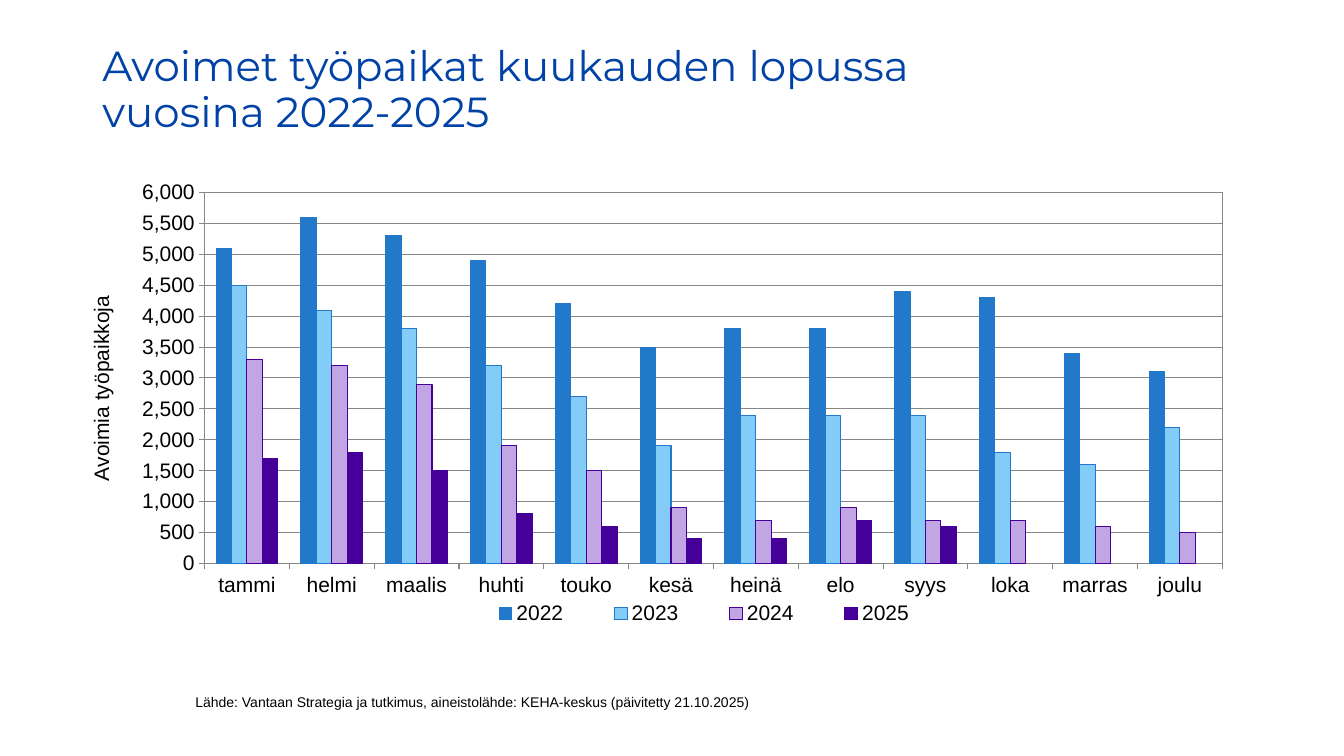
from lxml import etree
from pptx import Presentation
from pptx.chart.data import CategoryChartData
from pptx.dml.color import RGBColor
from pptx.enum.chart import XL_CHART_TYPE, XL_LEGEND_POSITION, XL_TICK_MARK
from pptx.enum.text import MSO_ANCHOR, PP_ALIGN
from pptx.oxml import parse_xml
from pptx.oxml.ns import nsdecls, qn
from pptx.util import Pt

COLUMN = XL_CHART_TYPE.COLUMN_CLUSTERED
BOTTOM = XL_LEGEND_POSITION.BOTTOM
OUTSIDE = XL_TICK_MARK.OUTSIDE
TOP = MSO_ANCHOR.TOP
LEFT = PP_ALIGN.LEFT

COLORS = {
    "title": "0042A6", "text": "000000", "grid": "878787",
    "blue": "2278C9", "sky": "84CCF8", "lilac": "C2A6E3", "violet": "450099",
}
MONTHS = ["tammi", "helmi", "maalis", "huhti", "touko", "kesä",
          "heinä", "elo", "syys", "loka", "marras", "joulu"]
YEARS = [
    ("2022", "blue", "blue",
     [5100, 5600, 5300, 4900, 4200, 3500, 3800, 3800, 4400, 4300, 3400, 3100]),
    ("2023", "sky", "blue",
     [4500, 4100, 3800, 3200, 2700, 1900, 2400, 2400, 2400, 1800, 1600, 2200]),
    ("2024", "lilac", "violet",
     [3300, 3200, 2900, 1900, 1500, 900, 700, 900, 700, 700, 600, 500]),
    ("2025", "violet", "violet",
     [1700, 1800, 1500, 800, 600, 400, 400, 700, 600, None, None, None]),
]


def assign(target, values):
    for name, value in values.items():
        setattr(target, name, value)


class Deck:
    def __init__(self, width, height):
        self.file = Presentation()
        assign(self.file, {"slide_width": Pt(width), "slide_height": Pt(height)})
        self.slide = self.file.slides.add_slide(self.file.slide_layouts[5])

    def color(self, name):
        return RGBColor.from_string(COLORS[name])

    def style(self, font, face, size, color):
        assign(font, {"name": face, "size": Pt(size), "bold": False})
        font.color.rgb = self.color(color)

    def stroke(self, line, color):
        line.color.rgb = self.color(color)
        line.width = Pt(0.75)

    def label(self, shape, text, face, size, color, ratio=1.0):
        frame = shape.text_frame
        assign(frame, {"word_wrap": True, "vertical_anchor": TOP})
        para = frame.paragraphs[0]
        assign(para, {"text": text, "alignment": LEFT, "line_spacing": ratio})
        for run in para.runs:
            self.style(run.font, face, size, color)

    def title(self, text, left, top, width, height):
        shape = self.slide.shapes.title
        assign(shape, {"left": Pt(left), "top": Pt(top),
                       "width": Pt(width), "height": Pt(height)})
        self.label(shape, text, "Montserrat", 30, "title", 0.9)

    def note(self, text, left, top, width, height):
        box = self.slide.shapes.add_textbox(Pt(left), Pt(top), Pt(width), Pt(height))
        self.label(box, text, "Arial", 10, "text")

    def place(self, parent, index, inner, **area):
        for old in parent.findall(qn("c:layout")):
            parent.remove(old)
        layout = parse_xml(f"<c:layout {nsdecls('c')}><c:manualLayout/></c:layout>")
        parts = {"layoutTarget": "inner"} if inner else {}
        parts.update(xMode="edge", yMode="edge", **area)
        for name, value in parts.items():
            etree.SubElement(layout[0], qn("c:" + name)).set("val", str(value))
        parent.insert(index, layout)

    def chart(self, caption, left, top, width, height):
        data = CategoryChartData(number_format="#,##0")
        data.categories = MONTHS
        for year, _, _, values in YEARS:
            data.add_series(year, values)
        chart = self.slide.shapes.add_chart(
            COLUMN, Pt(left), Pt(top), Pt(width), Pt(height), data).chart
        assign(chart, {"has_title": False, "has_legend": True})
        self.style(chart.font, "Arial", 15, "text")
        assign(chart.legend, {"position": BOTTOM, "include_in_layout": False})
        self.style(chart.legend.font, "Arial", 15, "text")
        assign(chart.plots[0], {"gap_width": 150, "overlap": 0,
                                "vary_by_categories": False})
        for series, (_, fill, edge, _) in zip(chart.plots[0].series, YEARS):
            series.format.fill.solid()
            series.format.fill.fore_color.rgb = self.color(fill)
            self.stroke(series.format.line, edge)
        scale = chart.value_axis
        assign(scale, {"minimum_scale": 0, "maximum_scale": 6000,
                       "major_unit": 500, "has_major_gridlines": True})
        assign(scale.tick_labels, {"number_format": "#,##0",
                                   "number_format_is_linked": False})
        self.stroke(scale.major_gridlines.format.line, "grid")
        for axis in (scale, chart.category_axis):
            axis.major_tick_mark = OUTSIDE
            self.stroke(axis.format.line, "grid")
            self.style(axis.tick_labels.font, "Arial", 15, "text")
        frame = scale.axis_title.text_frame
        frame.text = caption
        self.style(frame.paragraphs[0].runs[0].font, "Arial", 15, "text")
        plot = chart.element.find(".//" + qn("c:plotArea"))
        self.place(plot, 0, True, x=0.104, y=0.04, w=0.878, h=0.806)
        plot.append(parse_xml(
            f'<c:spPr {nsdecls("c", "a")}><a:noFill/><a:ln w="{Pt(0.75)}"><a:solidFill>'
            f'<a:srgbClr val="{COLORS["grid"]}"/></a:solidFill></a:ln></c:spPr>'))
        legend = chart.element.find(".//" + qn("c:legend"))
        self.place(legend, 1, False, x=0.32, y=0.92, w=0.43, h=0.07)

    def save(self):
        self.file.save("out.pptx")


def main():
    deck = Deck(960, 540)
    deck.title("Avoimet työpaikat kuukauden lopussa \vvuosina 2022-2025",
               66, 29, 828, 80.5)
    deck.chart("Avoimia työpaikkoja", 60, 124.5, 828, 328.5)
    deck.note("Lähde: Vantaan Strategia ja tutkimus, aineistolähde: "
              "KEHA-keskus (päivitetty 21.10.2025)", 132.5, 492, 420, 29)
    deck.save()


if __name__ == "__main__":
    main()
